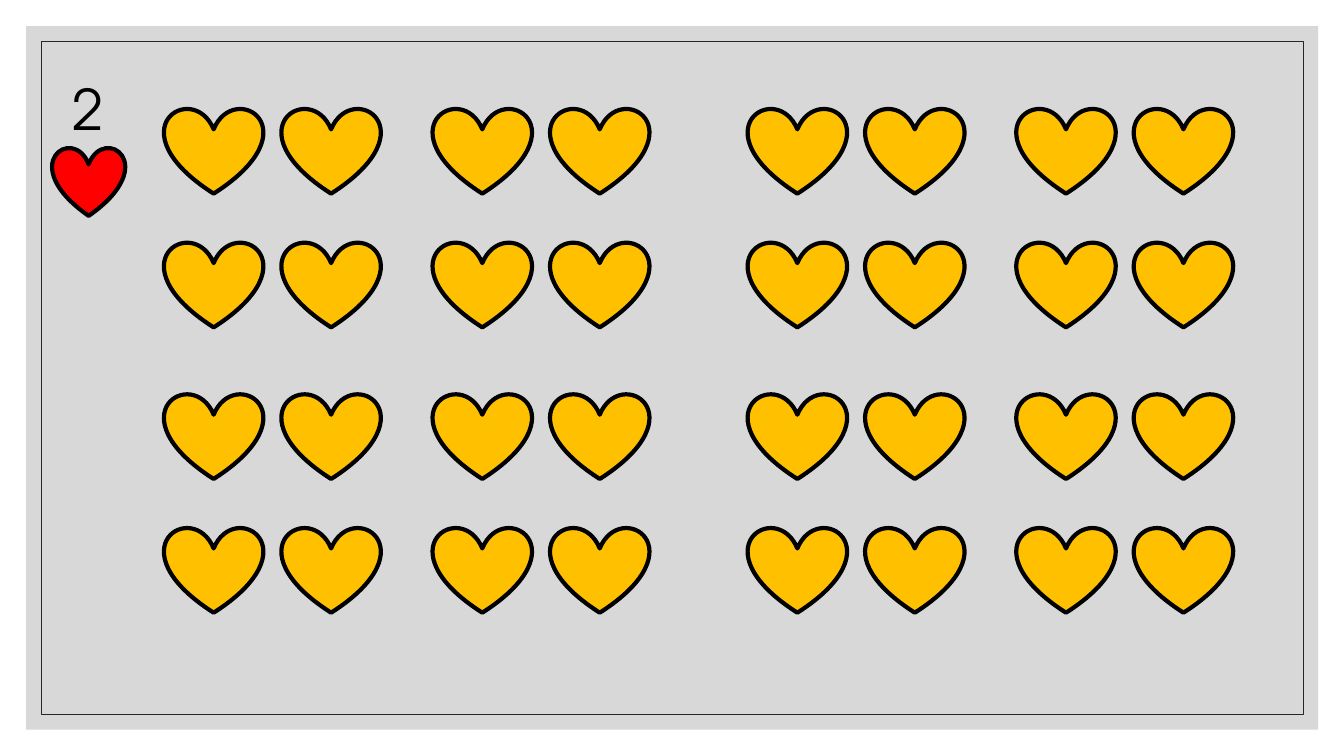
from dataclasses import dataclass
from itertools import product

from lxml.etree import SubElement
from pptx import Presentation
from pptx.dml.color import RGBColor
from pptx.enum.shapes import MSO_SHAPE
from pptx.enum.text import PP_ALIGN
from pptx.oxml.ns import qn
from pptx.util import Cm, Pt


@dataclass(frozen=True)
class Theme:
    font: str = "TeX Gyre Adventor"
    panel: str = "BFBFBF"
    panel_alpha: int = 60
    frame: str = "262626"
    ink: str = "000000"
    gold: str = "FFC000"
    red: str = "FF0000"
    number_size: int = 40
    frame_width: float = 0.5
    heart_width: float = 3


class CountingSlide:
    def __init__(self, slide, theme):
        self.slide = slide
        self.theme = theme

    def shape(self, kind, box, fill=None, line=None, width=0, alpha=None):
        shape = self.slide.shapes.add_shape(kind, *map(Cm, box))
        shape.shadow.inherit = False
        if fill:
            shape.fill.solid()
            shape.fill.fore_color.rgb = RGBColor.from_string(fill)
        else:
            shape.fill.background()
        if alpha is not None:
            color = shape.fill._xPr.find(qn("a:solidFill"))[0]
            SubElement(color, qn("a:alpha"), val=str(alpha * 1000))
        if line:
            shape.line.color.rgb = RGBColor.from_string(line)
            shape.line.width = Pt(width)
        else:
            shape.line.fill.background()

    def backdrop(self, panel_box, frame_box):
        t = self.theme
        self.shape(MSO_SHAPE.RECTANGLE, panel_box, fill=t.panel, alpha=t.panel_alpha)
        self.shape(MSO_SHAPE.RECTANGLE, frame_box, line=t.frame, width=t.frame_width)

    def heart(self, box, color):
        t = self.theme
        self.shape(MSO_SHAPE.HEART, box, color, t.ink, t.heart_width)

    def number(self, text, box):
        frame = self.slide.shapes.add_textbox(*map(Cm, box)).text_frame
        frame.word_wrap = True
        frame.text = text
        paragraph = frame.paragraphs[0]
        paragraph.alignment = PP_ALIGN.CENTER
        font = paragraph.runs[0].font
        font.name = self.theme.font
        font.size = Pt(self.theme.number_size)
        font.color.rgb = RGBColor.from_string(self.theme.ink)


def main():
    deck = Presentation()
    deck.slide_width, deck.slide_height = Cm(33.87), Cm(19.05)
    theme = Theme()
    board = CountingSlide(deck.slides.add_slide(deck.slide_layouts[6]), theme)

    # Grey panel and thin frame
    board.backdrop((0.66, 0.66, 32.56, 17.73), (1.04, 1.04, 31.8, 16.97))

    # Multiplier with its red heart
    board.number("2", (1.19, 1.75, 2.08, 1.96))
    board.heart((1.32, 3.71, 1.83, 1.73), theme.red)

    # Gold hearts: two by two blocks, each holding two rows of two pairs
    left, top = 4.14, 2.72
    block_dx, block_dy = 14.71, 7.19
    pair_dx, heart_dx, row_dy = 6.77, 2.96, 3.37
    for block_row, row, block, pair, heart in product(range(2), repeat=5):
        x = left + block * block_dx + pair * pair_dx + heart * heart_dx
        y = top + block_row * block_dy + row * row_dy
        board.heart((x, y, 2.49, 2.16), theme.gold)

    deck.save("out.pptx")


if __name__ == "__main__":
    main()
